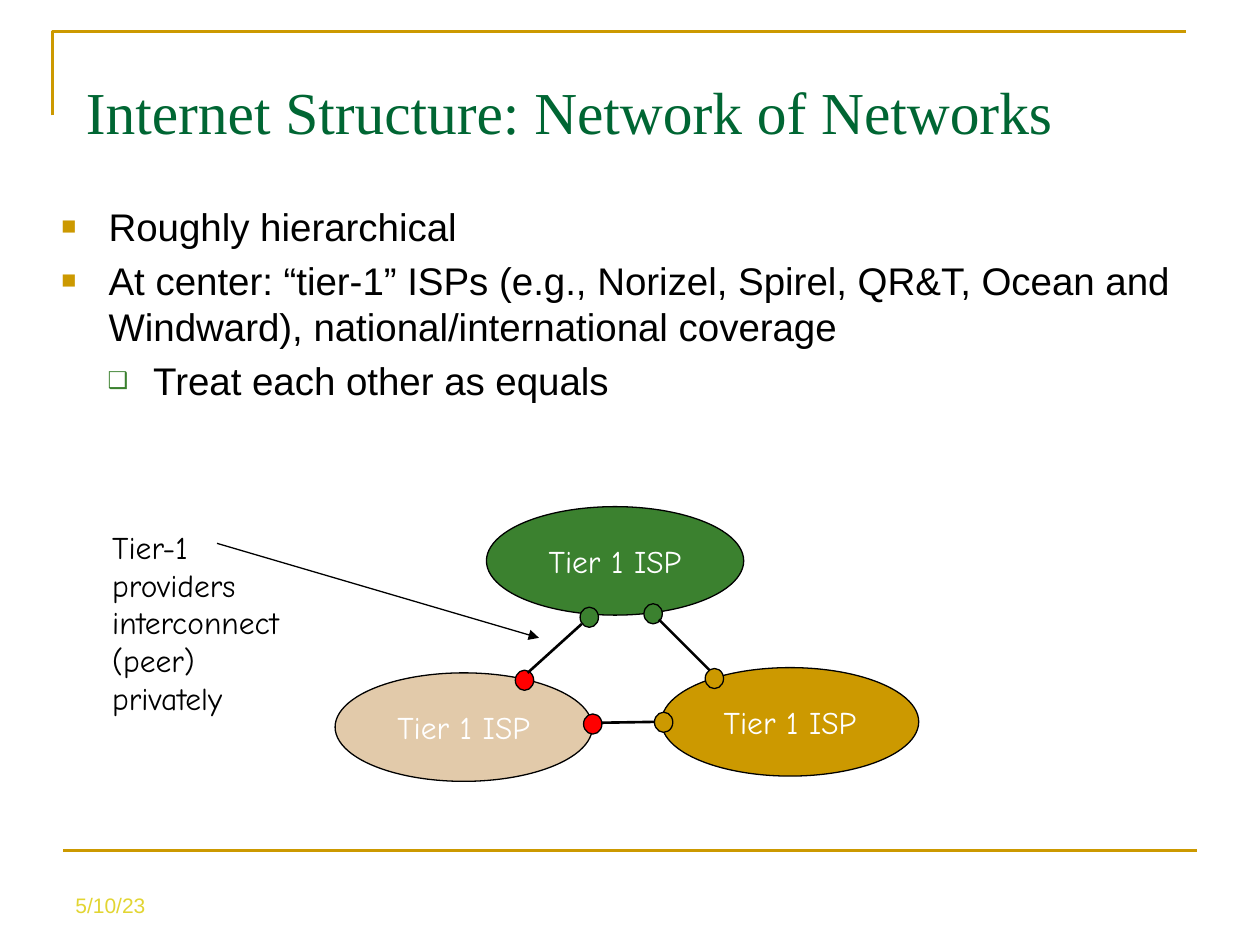
from lxml.etree import SubElement
from pptx import Presentation
from pptx.dml.color import RGBColor
from pptx.enum.shapes import MSO_CONNECTOR, MSO_SHAPE
from pptx.enum.text import MSO_ANCHOR, PP_ALIGN
from pptx.oxml.ns import qn
from pptx.util import Pt

GOLD, GREEN, TAN, RED = "CC9900", "3B812F", "E2CAAA", "FF0000"
BLACK, WHITE = "000000", "FFFFFF"
HAND = "Comic Neue"

TITLE = "Internet Structure: Network of Networks"
DATE = "5/10/23"
NOTE = "Tier-1 providers interconnect (peer) privately"
# text, left indent, hanging indent, bullet, bullet colour, bullet size in %
POINTS = [
    ("Roughly hierarchical", 27, 27, "■", GOLD, 65),
    ("At center: “tier-1” ISPs (e.g., Norizel, Spirel, QR&T, Ocean and "
     "Windward), national/international coverage", 27, 27, "■", GOLD, 65),
    ("Treat each other as equals", 52.5, 26, "❑", GREEN, 60),
]
ISP = "Tier 1 ISP"
ISP_SIZE = (147, 62)
ISPS = [(191.5, 384.5, TAN), (278, 289.5, GREEN), (378, 381.5, GOLD)]
DOT_SIZE = (10.5, 11.5)
DOTS = [
    (403, 382, GOLD), (368, 345, GREEN), (331.5, 347, GREEN),
    (294.5, 383, RED), (333.5, 408, RED), (374, 407, GOLD),
]
LINKS = [(344, 413, 374, 412.5), (376.5, 354, 405.5, 383),
         (301.5, 384.5, 332.5, 356.5)]


def color(code):
    return RGBColor.from_string(code)


def write(shape, text, size=18, font=HAND, ink=BLACK, align=PP_ALIGN.LEFT,
          anchor=MSO_ANCHOR.TOP, wrap=True, more=False):
    """Set the text of a shape, or add a paragraph to it if more is true."""
    frame = shape.text_frame
    frame.word_wrap = wrap
    frame.vertical_anchor = anchor
    para = frame.add_paragraph() if more else frame.paragraphs[0]
    para.alignment = align
    run = para.add_run()
    run.text = text
    run.font.size = Pt(size)
    run.font.name = font
    run.font.color.rgb = color(ink)
    return para


def box(*rect):
    return slide.shapes.add_textbox(*map(Pt, rect))


def oval(x, y, size, fill):
    shape = slide.shapes.add_shape(MSO_SHAPE.OVAL, *map(Pt, (x, y, *size)))
    shape.shadow.inherit = False
    shape.fill.solid()
    shape.fill.fore_color.rgb = color(fill)
    shape.line.color.rgb = color(BLACK)
    shape.line.width = Pt(0.75)
    return shape


def line(ends, ink=BLACK, width=1.5, arrow=False):
    link = slide.shapes.add_connector(MSO_CONNECTOR.STRAIGHT, *map(Pt, ends))
    link.line.color.rgb = color(ink)
    link.line.width = Pt(width)
    if arrow:
        SubElement(link.line._get_or_add_ln(), qn("a:tailEnd"), type="triangle")
    SubElement(link._element.spPr, qn("a:effectLst"))


def bullet(para, left, hang, mark, ink, percent):
    props = para._p.get_or_add_pPr()
    props.set("marL", str(Pt(left)))
    props.set("indent", str(-Pt(hang)))
    tint = SubElement(props, qn("a:buClr"))
    SubElement(tint, qn("a:srgbClr"), val=ink)
    SubElement(props, qn("a:buSzPct"), val=str(percent * 1000))
    SubElement(props, qn("a:buFont"), typeface="Arial")
    SubElement(props, qn("a:buChar"), char=mark)


deck = Presentation()
deck.slide_width, deck.slide_height = Pt(720), Pt(540)
slide = deck.slides.add_slide(deck.slide_layouts[6])

path = slide.shapes.build_freeform(Pt(30), Pt(66))
path.add_line_segments([(Pt(30), Pt(18)), (Pt(678), Pt(18))], close=False)
corner = path.convert_to_shape()
corner.shadow.inherit = False
corner.fill.background()
corner.line.color.rgb = color(GOLD)
corner.line.width = Pt(1.5)
line((36, 486, 684, 486), GOLD)

write(box(42, 18, 646, 90), TITLE, size=34, font="Times New Roman",
      ink="006633", anchor=MSO_ANCHOR.MIDDLE)

body = box(28, 112.5, 664.5, 365.5)
for i, (text, *marks) in enumerate(POINTS):
    para = write(body, text, size=22, font="Arial", more=i > 0)
    para.space_before = Pt(4.4)
    bullet(para, *marks)

for x, y, fill in ISPS:
    write(oval(x, y, ISP_SIZE, fill), ISP, ink=WHITE, align=PP_ALIGN.CENTER,
          anchor=MSO_ANCHOR.MIDDLE, wrap=False)
for x, y, fill in DOTS:
    oval(x, y, DOT_SIZE, fill)
for ends in LINKS:
    line(ends)

write(box(57, 298, 123, 115), NOTE)
line((124, 310.5, 308, 364.5), width=0.75, arrow=True)
write(box(36, 492, 168, 36), DATE, size=12, font="Arial", ink="E2D532",
      anchor=MSO_ANCHOR.BOTTOM)

deck.save("out.pptx")
